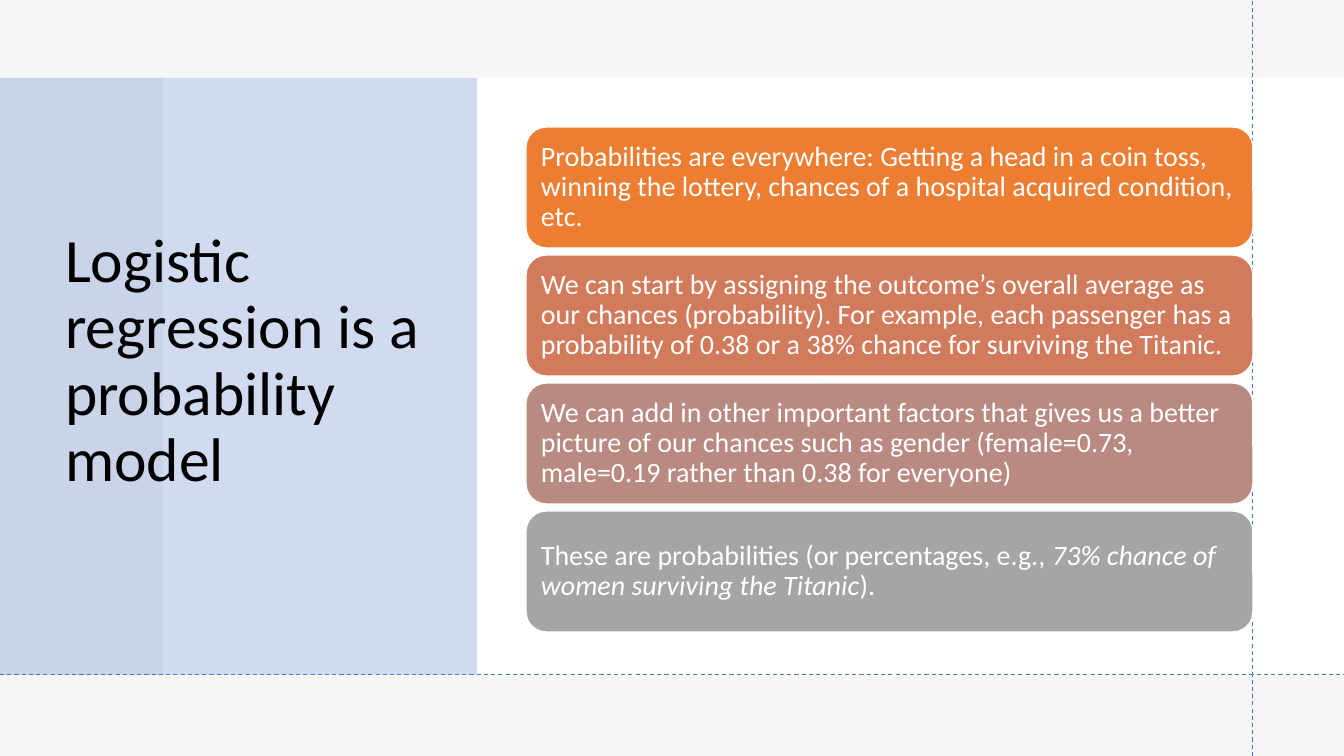
"""Build the slide that presents logistic regression as a probability model."""
from lxml.etree import SubElement
from pptx import Presentation
from pptx.dml.color import RGBColor
from pptx.enum.dml import MSO_LINE
from pptx.enum.shapes import MSO_CONNECTOR, MSO_SHAPE
from pptx.enum.text import MSO_ANCHOR, MSO_AUTO_SIZE, PP_ALIGN
from pptx.oxml.ns import qn
from pptx.util import Emu, Pt

PX_PER_INCH = 100.8
SLIDE_W, SLIDE_H = 1344, 756
FONT = "Calibri"
COLORS = {
    "white": "FFFFFF",
    "black": "000000",
    "gray": "E7E6E6",
    "blue": "4472C4",
    "orange": "ED7D31",
    "terracotta": "D17B5C",
    "rose": "B98A82",
    "silver": "A5A5A5",
}
CARD_X, CARD_Y, CARD_W, CARD_H, CARD_STEP = 526, 127, 727, 121, 128
CARDS = [
    ("orange", [("Probabilities are everywhere: Getting a head in a coin toss, winning "
                 "the lottery, chances of a hospital acquired condition, etc.", False)]),
    ("terracotta", [("We can start by assigning the outcome’s overall average as our chances "
                     "(probability). For example, each passenger has a probability of 0.38 "
                     "or a 38% chance for surviving the Titanic.", False)]),
    ("rose", [("We can add in other important factors that gives us a better picture of our "
               "chances such as gender (female=0.73, male=0.19 rather than 0.38 for "
               "everyone)", False)]),
    ("silver", [("These are probabilities (or percentages, e.g., ", False),
                ("73% chance of women surviving the Titanic", True),
                (").", False)]),
]


def px(length):
    return Emu(round(length * 914400 / PX_PER_INCH))


def rgb(color):
    return RGBColor.from_string(COLORS[color])


def format_run(run, size, color, italic=False):
    run.font.name = FONT
    run.font.size = Pt(size)
    run.font.color.rgb = rgb(color)
    run.font.italic = italic


def add_block(slide, preset, box, color, opacity=100):
    block = slide.shapes.add_shape(preset, *map(px, box))
    block.shadow.inherit = False
    block.fill.solid()
    block.fill.fore_color.rgb = rgb(color)
    block.line.fill.background()
    if opacity < 100:
        fill_color = block.fill._xPr.find(qn("a:solidFill"))[0]
        SubElement(fill_color, qn("a:alpha")).set("val", str(opacity * 1000))
    return block


def add_guide(slide, x1, y1, x2, y2):
    guide = slide.shapes.add_connector(MSO_CONNECTOR.STRAIGHT, *map(px, (x1, y1, x2, y2)))
    guide.line.color.rgb = rgb("blue")
    guide.line.width = Pt(0.75)
    guide.line.dash_style = MSO_LINE.DASH
    SubElement(guide._element.spPr, qn("a:effectLst"))


def place_title(slide, text, box):
    title = slide.shapes.title
    title.left, title.top, title.width, title.height = map(px, box)
    frame = title.text_frame
    frame.text = text
    frame.word_wrap = True
    frame.auto_size = MSO_AUTO_SIZE.NONE
    frame.vertical_anchor = MSO_ANCHOR.MIDDLE
    paragraph = frame.paragraphs[0]
    paragraph.alignment = PP_ALIGN.LEFT
    paragraph.line_spacing = 0.9
    format_run(paragraph.runs[0], 44, "black")
    slide.shapes._spTree.append(title._element)


def add_card(slide, top, color, pieces):
    card = add_block(slide, MSO_SHAPE.ROUNDED_RECTANGLE, (CARD_X, top, CARD_W, CARD_H), color)
    card.line.color.rgb = rgb("white")
    card.line.width = Pt(1)
    frame = card.text_frame
    frame.word_wrap = True
    frame.vertical_anchor = MSO_ANCHOR.MIDDLE
    frame.margin_left = frame.margin_right = px(9)
    frame.margin_top = frame.margin_bottom = px(8)
    paragraph = frame.paragraphs[0]
    paragraph.alignment = PP_ALIGN.LEFT
    paragraph.line_spacing = 0.9
    for text, italic in pieces:
        run = paragraph.add_run()
        run.text = text
        format_run(run, 20, "white", italic)


def main():
    deck = Presentation()
    deck.slide_width, deck.slide_height = px(SLIDE_W), px(SLIDE_H)
    slide = deck.slides.add_slide(deck.slide_layouts[5])
    slide.background.fill.solid()
    slide.background.fill.fore_color.rgb = rgb("white")

    add_block(slide, MSO_SHAPE.RECTANGLE, (0, 0, SLIDE_W, SLIDE_H), "gray", 35)
    add_block(slide, MSO_SHAPE.RECTANGLE, (163, 78, SLIDE_W - 163, 598), "white")
    add_block(slide, MSO_SHAPE.RECTANGLE, (0, 78, 477, 597), "blue", 25)
    place_title(slide, "Logistic regression is a probability model", (55, 75, 398, 574))

    add_guide(slide, 1253, SLIDE_H, 1253, 0)
    add_guide(slide, 0, 675, SLIDE_W, 675)
    for index, (color, pieces) in enumerate(CARDS):
        add_card(slide, CARD_Y + index * CARD_STEP, color, pieces)

    deck.save("out.pptx")


if __name__ == "__main__":
    main()
